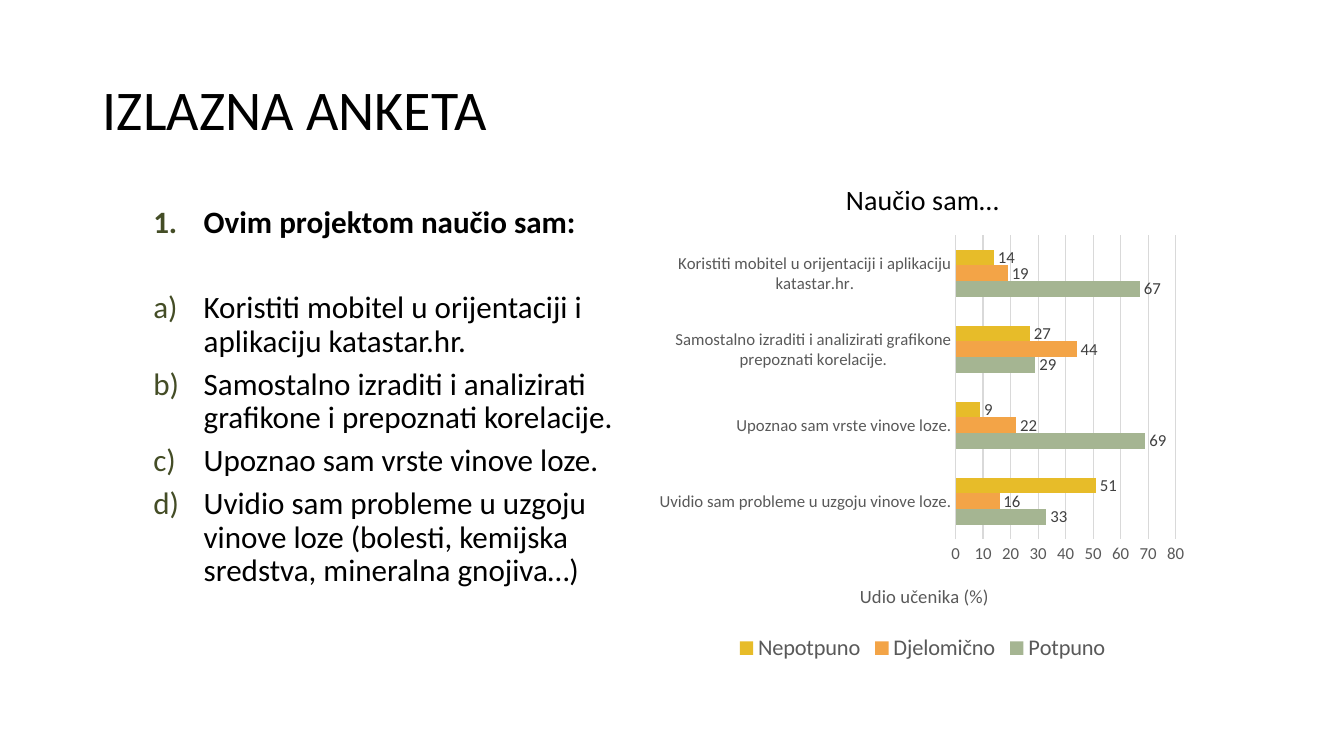
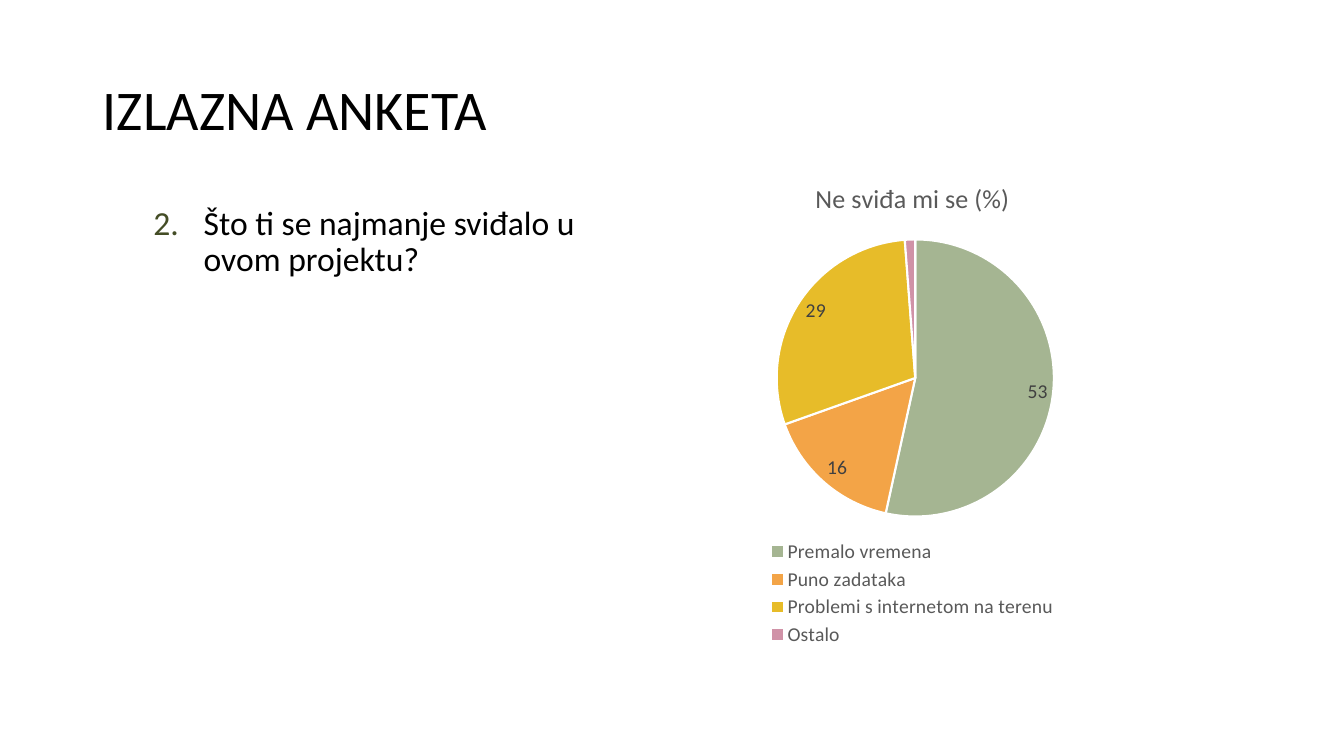
from lxml import etree
from pptx import Presentation
from pptx.chart.data import CategoryChartData
from pptx.dml.color import RGBColor
from pptx.enum.chart import XL_CHART_TYPE, XL_LABEL_POSITION, XL_LEGEND_POSITION, XL_TICK_MARK
from pptx.enum.text import MSO_ANCHOR, MSO_AUTO_SIZE, PP_ALIGN
from pptx.oxml.ns import qn
from pptx.util import Inches, Pt

BAR, PIE = XL_CHART_TYPE.BAR_CLUSTERED, XL_CHART_TYPE.PIE
OUTSIDE_END, BEST_FIT = XL_LABEL_POSITION.OUTSIDE_END, XL_LABEL_POSITION.BEST_FIT
BOTTOM = XL_LEGEND_POSITION.BOTTOM
NO_TICK = XL_TICK_MARK.NONE

FONT = "Calibri"
COLORS = {
    "text": "000000",
    "number": "444D26",
    "muted": "595959",
    "label": "404040",
    "grid": "D9D9D9",
    "white": "FFFFFF",
    "green": "A5B592",
    "orange": "F3A447",
    "yellow": "E7BC29",
    "pink": "D092A7",
}
HEADING, LETTER = "arabicPeriod", "alphaLcParenR"


def rgb(name):
    return RGBColor.from_string(COLORS[name])


def place(element, index, **fractions):
    """Give a chart part a manual layout, in fractions of the chart's size."""
    for old in element.findall(qn("c:layout")):
        element.remove(old)
    layout = etree.Element(qn("c:layout"))
    manual = etree.SubElement(layout, qn("c:manualLayout"))
    if element.tag == qn("c:plotArea"):
        etree.SubElement(manual, qn("c:layoutTarget"), val="inner")
    for side in ("x", "y"):
        etree.SubElement(manual, qn(f"c:{side}Mode"), val="edge")
    for side, value in fractions.items():
        etree.SubElement(manual, qn(f"c:{side}"), val=str(value))
    element.insert(index, layout)


class SurveyDeck:
    def __init__(self):
        self.deck = Presentation()
        self.deck.slide_width, self.deck.slide_height = Inches(13.33), Inches(7.5)
        self.slide = None

    def style(self, font, size, color="text", bold=False):
        font.name, font.size, font.bold = FONT, Pt(size), bold
        font.color.rgb = rgb(color)

    def move(self, shape, left, top, width, height):
        shape.left, shape.top = Inches(left), Inches(top)
        shape.width, shape.height = Inches(width), Inches(height)

    def add_slide(self, title):
        self.slide = self.deck.slides.add_slide(self.deck.slide_layouts[1])
        box = self.slide.shapes.title
        self.move(box, 0.92, 0.4, 11.5, 1.45)
        frame = box.text_frame
        frame.auto_size = MSO_AUTO_SIZE.NONE
        frame.vertical_anchor = MSO_ANCHOR.MIDDLE
        para = frame.paragraphs[0]
        para.alignment, para.line_spacing = PP_ALIGN.LEFT, Pt(40)
        self.add_span(para, title, 40)

    def add_span(self, para, text, size, color="text", bold=False):
        span = para.add_run()
        span.text = text
        self.style(span.font, size, color, bold)

    def add_number(self, para, scheme, start):
        properties = para._p.get_or_add_pPr()
        properties.set("marL", str(Inches(1)))
        properties.set("indent", str(Inches(-0.5)))
        color = etree.SubElement(properties, qn("a:buClr"))
        etree.SubElement(color, qn("a:srgbClr"), val=COLORS["number"])
        number = etree.SubElement(properties, qn("a:buAutoNum"), type=scheme)
        if start > 1:
            number.set("startAt", str(start))

    def add_question(self, question, size, start=1, bold=False, answers=()):
        """Fill the body with a numbered question and its lettered answers."""
        box = self.slide.placeholders[1]
        self.move(box, 0.92, 2, 5.3, 4.5)
        frame = box.text_frame
        frame.auto_size = MSO_AUTO_SIZE.NONE
        for index, text in enumerate((question, *answers)):
            para = frame.add_paragraph() if index else frame.paragraphs[0]
            para.level = 1
            if index:
                self.add_number(para, LETTER, 1)
            else:
                self.add_number(para, HEADING, start)
            para.line_spacing = 0.9
            para.space_before = Pt({0: 0, 1: 37}.get(index, 6.7))
            self.add_span(para, text, size, bold=bold and not index)

    def add_chart(self, kind, area, title, title_size, title_color, legend_size, categories, series):
        data = CategoryChartData()
        data.categories = categories
        for name, values in series:
            data.add_series(name, values)
        bounds = [Inches(length) for length in area]
        chart = self.slide.shapes.add_chart(kind, *bounds, data).chart
        self.style(chart.font, 10)
        chart.has_title = True
        self.add_span(chart.chart_title.text_frame.paragraphs[0], title, title_size, title_color)
        chart.has_legend = True
        chart.legend.position = BOTTOM
        chart.legend.include_in_layout = False
        self.style(chart.legend.font, legend_size, "muted")
        return chart

    def add_labels(self, series, size, position):
        labels = series.data_labels
        labels.show_value = True
        labels.position = position
        self.style(labels.font, size, "label")

    def style_axis(self, axis):
        axis.major_tick_mark = axis.minor_tick_mark = NO_TICK
        self.style(axis.tick_labels.font, 12, "muted")

    def grid_line(self, line):
        line.color.rgb, line.width = rgb("grid"), Pt(0.75)

    def add_bars(self, area, title, axis_title, categories, series):
        values = [(name, numbers) for name, numbers, _ in series]
        chart = self.add_chart(BAR, area, title, 20, "text", 16, categories, values)
        plot = chart.plots[0]
        plot.gap_width, plot.vary_by_categories = 182, False
        for bars, (_, _, color) in zip(plot.series, series):
            bars.format.fill.solid()
            bars.format.fill.fore_color.rgb = rgb(color)
            self.add_labels(bars, 12, OUTSIDE_END)

        self.style_axis(chart.category_axis)
        self.grid_line(chart.category_axis.format.line)
        axis = chart.value_axis
        self.style_axis(axis)
        axis.minimum_scale, axis.maximum_scale, axis.major_unit = 0, 80, 10
        axis.format.line.fill.background()
        axis.has_major_gridlines = True
        self.grid_line(axis.major_gridlines.format.line)
        axis.has_title = True
        self.add_span(axis.axis_title.text_frame.paragraphs[0], axis_title, 13.3, "muted")

        plot_area = chart.element.find(".//" + qn("c:plotArea"))
        place(plot_area, 0, x=0.56, y=0.15, w=0.4, h=0.6)
        place(plot_area.find(f"{qn('c:valAx')}/{qn('c:title')}"), 1, x=0.38, y=0.83)

    def add_pie(self, area, title, slices):
        """Draw slices of (name, value, colour); the last one stays unlabelled."""
        names, values, colors = zip(*slices)
        chart = self.add_chart(PIE, area, title, 18.6, "muted", 14, names, [(title, values)])
        plot = chart.plots[0]
        plot.vary_by_categories = True
        series = plot.series[0]
        for index, color in enumerate(colors):
            shape = series.points[index].format
            shape.fill.solid()
            shape.fill.fore_color.rgb = rgb(color)
            shape.line.color.rgb, shape.line.width = rgb("white"), Pt(1.5)
        self.add_labels(series, 14, BEST_FIT)

        hidden = etree.Element(qn("c:dLbl"))
        etree.SubElement(hidden, qn("c:idx"), val=str(len(slices) - 1))
        etree.SubElement(hidden, qn("c:delete"), val="1")
        chart.element.find(f".//{qn('c:ser')}/{qn('c:dLbls')}").insert(0, hidden)
        place(chart.element.find(".//" + qn("c:plotArea")), 0, x=0.26, y=0.16, w=0.49, h=0.56)
        place(chart.element.find(".//" + qn("c:legend")), 1, x=0.24, y=0.76, w=0.52, h=0.23)


def main():
    survey = SurveyDeck()

    survey.add_slide("IZLAZNA ANKETA")
    survey.add_question("Ovim projektom naučio sam:", 22.2, bold=True, answers=(
        "Koristiti mobitel u orijentaciji i aplikaciju katastar.hr.",
        "Samostalno izraditi i analizirati grafikone i prepoznati korelacije.",
        "Upoznao sam vrste vinove loze.",
        "Uvidio sam probleme u uzgoju vinove loze (bolesti, kemijska sredstva, mineralna gnojiva…)",
    ))
    survey.add_bars(
        (6.42, 1.58, 5.46, 5.03), "Naučio sam…", "Udio učenika (%)",
        (
            "Uvidio sam probleme u uzgoju vinove loze.",
            "Upoznao sam vrste vinove loze.",
            "Samostalno izraditi i analizirati grafikone prepoznati korelacije.",
            "Koristiti mobitel u orijentaciji i aplikaciju katastar.hr.",
        ),
        (
            ("Potpuno", (33, 69, 29, 67), "green"),
            ("Djelomično", (16, 22, 44, 19), "orange"),
            ("Nepotpuno", (51, 9, 27, 14), "yellow"),
        ),
    )

    survey.add_slide("IZLAZNA ANKETA")
    survey.add_question("Što ti se najmanje sviđalo u ovom projektu?", 24, start=2)
    survey.add_pie((6.22, 1.59, 5.66, 4.91), "Ne sviđa mi se (%)", (
        ("Premalo vremena", 53, "green"),
        ("Puno zadataka", 16, "orange"),
        ("Problemi s internetom na terenu", 29, "yellow"),
        ("Ostalo", 1.2, "pink"),
    ))

    survey.deck.save("out.pptx")


if __name__ == "__main__":
    main()
